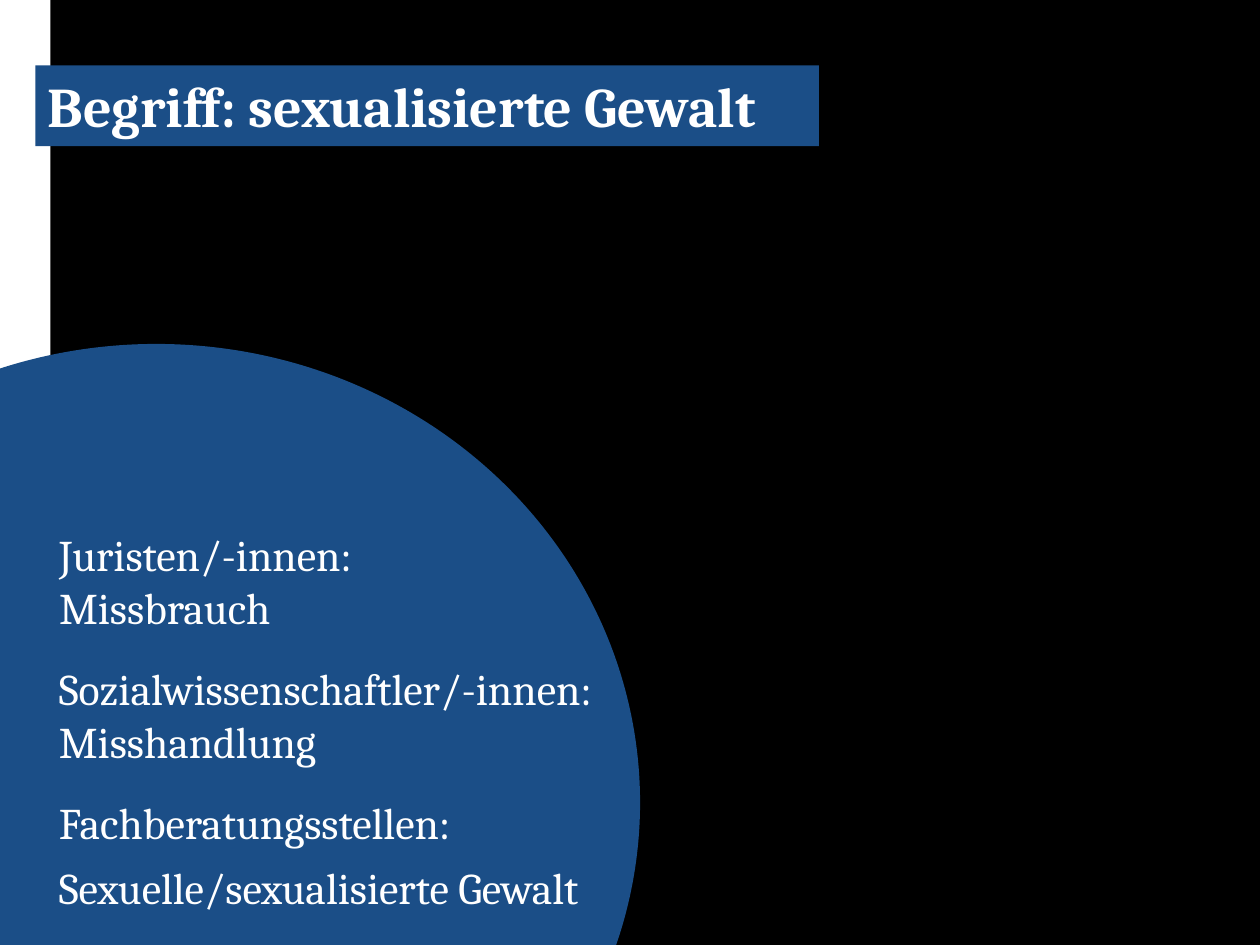
from pptx import Presentation
from pptx.dml.color import RGBColor
from pptx.enum.shapes import MSO_SHAPE
from pptx.enum.text import MSO_ANCHOR, PP_ALIGN
from pptx.util import Inches, Pt

RECTANGLE, OVAL = MSO_SHAPE.RECTANGLE, MSO_SHAPE.OVAL
TOP, LEFT = MSO_ANCHOR.TOP, PP_ALIGN.LEFT

BLACK = RGBColor(0x00, 0x00, 0x00)
WHITE = RGBColor(0xFF, 0xFF, 0xFF)
BLUE = RGBColor(0x1B, 0x4E, 0x87)

WIDTH, HEIGHT = 10, 7.5
MARGIN = 0.28
TERM_TOP, TERM_PITCH, TERM_HEIGHT = 4.14, 1.065, 0.55

TITLE_FORMAT = {"name": "Cambria", "size": Pt(32), "bold": True}
TERM_FORMAT = {"name": "Cambria", "size": Pt(25)}

# Each professional group with its term: box width and paragraphs
TERMS = [
    (3.39, ["Juristen/-innen: Missbrauch"]),
    (4.8, ["Sozialwissenschaftler/-innen: Misshandlung"]),
    (4.96, ["Fachberatungsstellen:", "Sexuelle/sexualisierte Gewalt"]),
]


def add_area(slide, outline, box, color):
    area = slide.shapes.add_shape(outline, *map(Inches, box))
    area.shadow.inherit = False
    area.fill.solid()
    area.fill.fore_color.rgb = color
    area.line.fill.background()
    return area


def write(frame, lines, font_format, indent=0):
    frame.word_wrap = True
    frame.vertical_anchor = TOP
    for index, line in enumerate(lines):
        paragraph = frame.add_paragraph() if index else frame.paragraphs[0]
        paragraph.alignment = LEFT
        if index:
            paragraph.space_before = Pt(7)
        if indent:
            properties = paragraph._p.get_or_add_pPr()
            properties.set("marL", str(Inches(indent)))
            properties.set("indent", "0")
        run = paragraph.add_run()
        run.text = line
        for key, value in font_format.items():
            setattr(run.font, key, value)
        run.font.color.rgb = WHITE


def add_terms(slide):
    for row, (width, lines) in enumerate(TERMS):
        box = (MARGIN, TERM_TOP + row * TERM_PITCH, width, TERM_HEIGHT)
        term = slide.shapes.add_textbox(*map(Inches, box))
        write(term.text_frame, lines, TERM_FORMAT, indent=0.09)


def main():
    deck = Presentation()
    deck.slide_width, deck.slide_height = Inches(WIDTH), Inches(HEIGHT)
    slide = deck.slides.add_slide(deck.slide_layouts[6])

    # Background and side strip
    slide.background.fill.solid()
    slide.background.fill.fore_color.rgb = BLACK
    add_area(slide, RECTANGLE, (0, 0, 0.04 * WIDTH, HEIGHT), WHITE)

    # Title bar
    title = add_area(slide, RECTANGLE, (MARGIN, 0.52, 6.22, 0.64), BLUE)
    write(title.text_frame, ["Begriff: sexualisierte Gewalt"], TITLE_FORMAT)

    # Disc with the terms
    add_area(slide, OVAL, (-2.6, 2.73, 7.68, 7.28), BLUE)
    add_terms(slide)

    deck.save("out.pptx")


if __name__ == "__main__":
    main()
